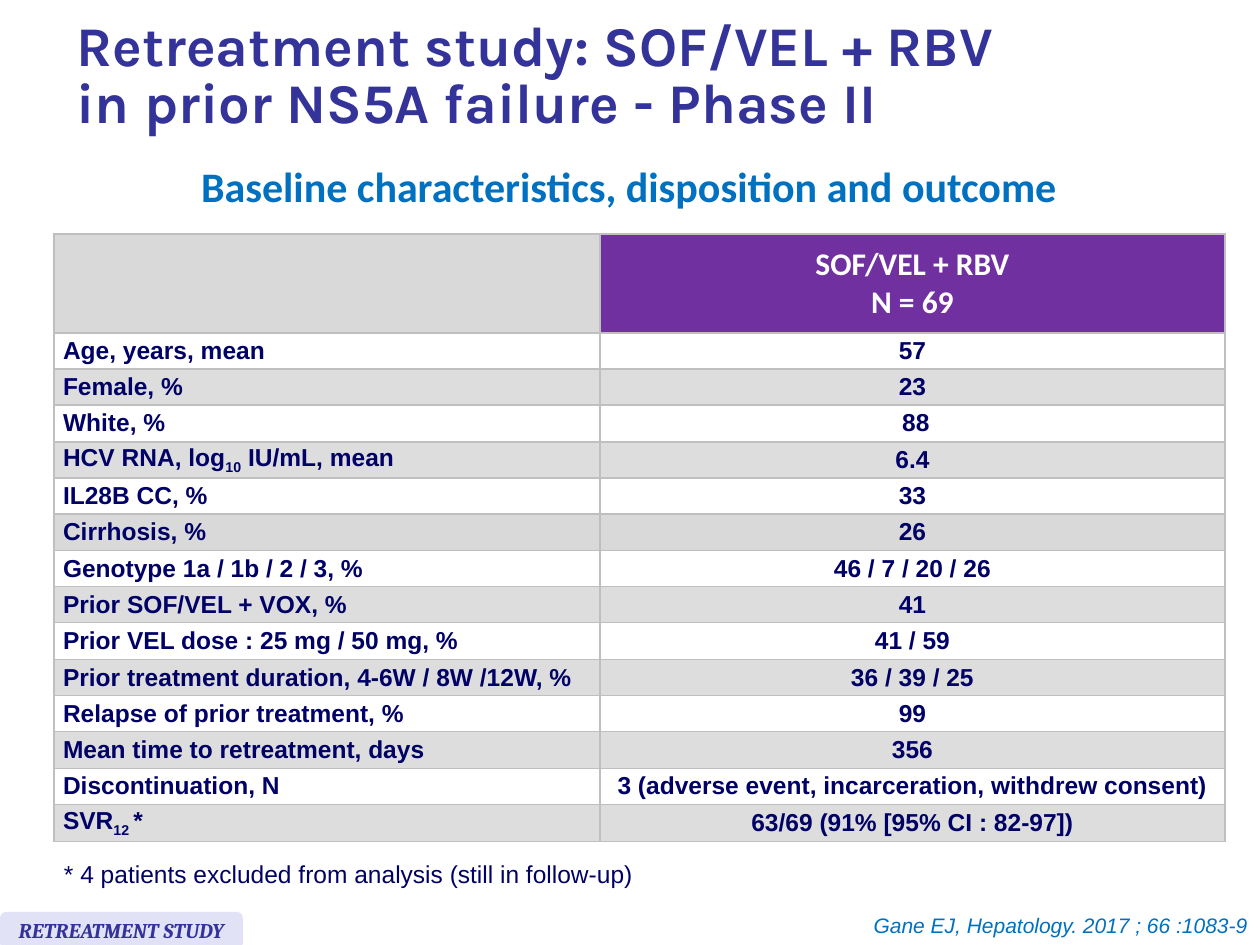
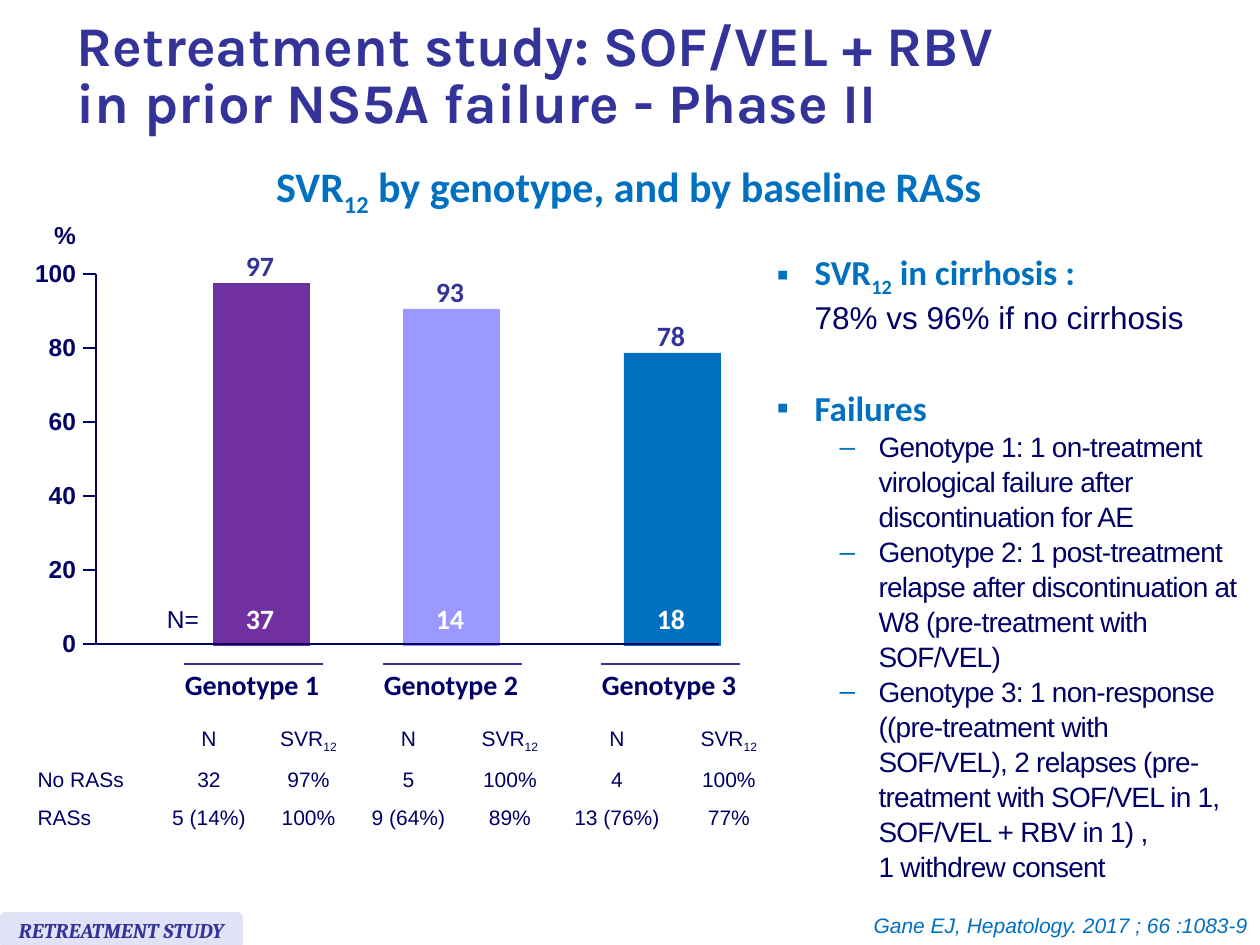
import lxml.etree
import pptx
import pptx.dml.color
import pptx.enum.shapes
import pptx.enum.text
import pptx.oxml.ns
import pptx.util

PX = 7257
INDIGO, BLUE, NAVY, PURPLE = "333399", "0070C0", "000066", "7030A0"
LILAC, PALE, WHITE, GRID = "9999FF", "E2E2F6", "FFFFFF", "BFBFBF"
rgb = pptx.dml.color.RGBColor.from_string
qn = pptx.oxml.ns.qn
Align = pptx.enum.text.PP_ALIGN
Anchor = pptx.enum.text.MSO_ANCHOR
Shape = pptx.enum.shapes.MSO_SHAPE


def write(paragraph, text, size, font, colour, bold=False, italic=False, spacing=0):
    for row, line in enumerate(text.split("\n")):
        if row:
            paragraph.add_line_break()
        for index, part in enumerate(line.split("_")):
            if not part:
                continue
            run = paragraph.add_run()
            run.text = part
            run.font.size = pptx.util.Pt(size)
            run.font.name = font
            run.font.bold = bold
            run.font.italic = italic
            run.font.color.rgb = rgb(colour)
            if index % 2:
                run._r.get_or_add_rPr().set("baseline", "-25000")
            if spacing:
                run._r.get_or_add_rPr().set("spc", str(spacing))


def label(slide, box, text, size, font, colour, bold=False, italic=False,
          align=Align.CENTER, margins=(0, 0)):
    frame = slide.shapes.add_textbox(*(n * PX for n in box)).text_frame
    frame.word_wrap = True
    frame.margin_left = frame.margin_right = margins[0] * PX
    frame.margin_top = frame.margin_bottom = margins[1] * PX
    frame.paragraphs[0].alignment = align
    write(frame.paragraphs[0], text, size, font, colour, bold, italic)


deck = pptx.Presentation()
deck.slide_width, deck.slide_height = 1260 * PX, 945 * PX
baseline_slide = deck.slides.add_slide(deck.slide_layouts[5])
genotype_slide = deck.slides.add_slide(deck.slide_layouts[1])

headings = [
    (baseline_slide, "Baseline characteristics, disposition and outcome", 183, 892),
    (genotype_slide, "SVR_12_ by genotype, and by baseline RASs", 255, 748),
]
for slide, heading, left, width in headings:
    title = slide.shapes.title
    title.left, title.top, title.width, title.height = 64 * PX, 10 * PX, 1181 * PX, 135 * PX
    title.text_frame.auto_size = pptx.enum.text.MSO_AUTO_SIZE.NONE
    title.text_frame.vertical_anchor = Anchor.MIDDLE
    headline = title.text_frame.paragraphs[0]
    headline.alignment = Align.LEFT
    headline.line_spacing = 0.85
    write(headline, "Retreatment study: SOF/VEL + RBV\nin prior NS5A failure - Phase II",
          32, "Karla", INDIGO, True)

    label(slide, (left, 155, width, 63), heading, 24, "Calibri", BLUE, True, margins=(12, 6))

    study_tag = slide.shapes.add_shape(Shape.ROUNDED_RECTANGLE, 0, 912 * PX, 243 * PX, 37 * PX)
    study_tag.shadow.inherit = False
    study_tag.fill.solid()
    study_tag.fill.fore_color.rgb = rgb(PALE)
    study_tag.line.fill.background()
    study_tag.text_frame.word_wrap = False
    study_tag.text_frame.vertical_anchor = Anchor.MIDDLE
    study_tag.text_frame.paragraphs[0].alignment = Align.CENTER
    write(study_tag.text_frame.paragraphs[0], "RETREATMENT STUDY", 12, "Cambria", INDIGO, True, True)

    label(slide, (848, 907, 412, 38), "Gane EJ, Hepatology. 2017 ; 66 :1083-9",
          12, "Arial", BLUE, italic=True, align=Align.RIGHT, margins=(12, 6))

characteristics = [
    ("", "SOF/VEL + RBV\nN = 69"),
    ("Age, years, mean", "57"),
    ("Female, %", "23"),
    ("White, %", " 88"),
    ("HCV RNA, log_10_ IU/mL, mean", "6.4"),
    ("IL28B CC, %", "33"),
    ("Cirrhosis, %", "26"),
    ("Genotype 1a / 1b / 2 / 3, %", "46 / 7 / 20 / 26"),
    ("Prior SOF/VEL + VOX, %", "41"),
    ("Prior VEL dose : 25 mg / 50 mg, %", "41 / 59"),
    ("Prior treatment duration, 4-6W / 8W /12W, %", "36 / 39 / 25"),
    ("Relapse of prior treatment, %", "99"),
    ("Mean time to retreatment, days", "356"),
    ("Discontinuation, N", "3 (adverse event, incarceration, withdrew consent)"),
    ("SVR_12 _*", "63/69 (91% [95% CI : 82-97])"),
]
patients = baseline_slide.shapes.add_table(
    len(characteristics), 2, 54 * PX, 234 * PX, 1171 * PX, 608 * PX).table
patients.first_row = patients.horz_banding = False
patients.columns[0].width, patients.columns[1].width = 546 * PX, 625 * PX
for r, values in enumerate(characteristics):
    patients.rows[r].height = (r * 509 // 14 - (r - 1) * 509 // 14 if r else 99) * PX
    for c, value in enumerate(values):
        cell = patients.cell(r, c)
        cell.margin_left = cell.margin_right = 9 * PX
        cell.margin_top = cell.margin_bottom = 0
        cell.vertical_anchor = Anchor.MIDDLE
        for side in ("a:lnL", "a:lnR", "a:lnT", "a:lnB"):
            border = lxml.etree.SubElement(cell._tc.get_or_add_tcPr(), qn(side), w="12700")
            paint = lxml.etree.SubElement(border, qn("a:solidFill"))
            lxml.etree.SubElement(paint, qn("a:srgbClr"), val=GRID)
        cell.fill.solid()
        if r == 0:
            shade = ("D9D9D9", PURPLE)[c]
        elif values[0].startswith("Cirrhosis"):
            shade = "D9D9D9"
        else:
            shade = WHITE if r % 2 else "DDDDDD"
        cell.fill.fore_color.rgb = rgb(shade)
        size, font, colour = (14, "Arial", NAVY) if r else (18, "Calibri", WHITE)
        for i, line in enumerate(value.split("\n")):
            paragraph = cell.text_frame.add_paragraph() if i else cell.text_frame.paragraphs[0]
            paragraph.alignment = Align.CENTER if c else Align.LEFT
            write(paragraph, line, size, font, colour, True)

label(baseline_slide, (52, 853, 694, 43), "* 4 patients excluded from analysis (still in follow-up)",
      14, "Arial", NAVY, align=Align.LEFT, margins=(12, 6))

zero_y, step = 644, 74
strokes = [(96, zero_y - 5 * step, 96, zero_y, NAVY), (89, zero_y, 719, zero_y, NAVY)]
for i in range(6):
    y = zero_y - i * step
    strokes.append((83, y, 96, y, NAVY))
    label(genotype_slide, (30, y - 16, 46, 30), str(20 * i), 14, "Arial", NAVY, True,
          align=Align.RIGHT)
label(genotype_slide, (54, 220, 30, 28), "%", 14, "Arial", NAVY, True, align=Align.LEFT)
label(genotype_slide, (167, 604, 40, 28), "N=", 14, "Arial", NAVY, align=Align.LEFT)

genotypes = [
    ("Genotype 1", "97", "37", 213, 283, 184, PURPLE),
    ("Genotype 2", "93", "14", 403, 309, 383, LILAC),
    ("Genotype 3", "78", "18", 624, 353, 601, BLUE),
]
for name, response, count, left, top, rule_left, colour in genotypes:
    bar = genotype_slide.shapes.add_shape(
        Shape.RECTANGLE, left * PX, top * PX, 97 * PX, (646 - top) * PX)
    bar.shadow.inherit = False
    bar.fill.solid()
    bar.fill.fore_color.rgb = rgb(colour)
    bar.line.fill.background()
    label(genotype_slide, (left - 1, top - 34, 96, 34), response, 16, "Calibri", INDIGO, True)
    label(genotype_slide, (left - 1, 602, 96, 34), count, 16, "Calibri", WHITE, True)
    label(genotype_slide, (rule_left - 12, 668, 160, 34), name, 16, "Calibri", NAVY, True)
    strokes.append((rule_left, 664, rule_left + 139, 664, INDIGO))

for x1, y1, x2, y2, colour in strokes:
    stroke = genotype_slide.shapes.add_connector(
        pptx.enum.shapes.MSO_CONNECTOR.STRAIGHT, x1 * PX, y1 * PX, x2 * PX, y2 * PX)
    stroke.line.color.rgb = rgb(colour)
    stroke.line.width = pptx.util.Pt(1.5)
    lxml.etree.SubElement(stroke._element.spPr, qn("a:effectLst"))

resistance = [
    [""] + ["N", "SVR_12_"] * 3,
    ["No RASs", "32", "97%", "5", "100%", "4", "100%"],
    ["RASs", "5 (14%)", "100%", "9 (64%)", "89%", "13 (76%)", "77%"],
]
outcomes = genotype_slide.shapes.add_table(3, 7, 25 * PX, 721 * PX, 755 * PX, 114 * PX).table
outcomes.first_row = outcomes.horz_banding = False
for c, width in enumerate((129, 110, 89, 111, 92, 122, 102)):
    outcomes.columns[c].width = width * PX
for r, values in enumerate(resistance):
    for c, value in enumerate(values):
        cell = outcomes.cell(r, c)
        cell.fill.background()
        paragraph = cell.text_frame.paragraphs[0]
        paragraph.alignment = Align.CENTER if c else Align.LEFT
        paragraph.font.size = pptx.util.Pt(12)
        write(paragraph, value, 12, "Arial", NAVY)

findings = [
    (0, "SVR_12_ in cirrhosis : \n", "78% vs 96% if no cirrhosis", 0),
    (0, "Failures", "", 29),
    (1, "", "Genotype 1: 1 on-treatment virological failure after discontinuation for AE", 0),
    (1, "", "Genotype 2: 1 post-treatment relapse after discontinuation at W8 "
            "(pre-treatment with SOF/VEL)", 0),
    (1, "", "Genotype 3: 1 non-response ((pre-treatment with SOF/VEL), 2 relapses (pre-treatment "
            "with SOF/VEL in 1, SOF/VEL + RBV in 1) , \n1 withdrew consent", 0),
]
body = genotype_slide.placeholders[1]
body.left, body.top, body.width, body.height = 764 * PX, 244 * PX, 486 * PX, 615 * PX
body.text_frame.auto_size = pptx.enum.text.MSO_AUTO_SIZE.NONE
for i, (level, lead, detail, gap) in enumerate(findings):
    paragraph = body.text_frame.add_paragraph() if i else body.text_frame.paragraphs[0]
    paragraph.level = level
    margin, hanging, mark = ((38, 38, "▪"), (102, 39, "–"))[level]
    properties = paragraph._p.get_or_add_pPr()
    properties.set("marL", str(margin * PX))
    properties.set("indent", str(-hanging * PX))
    tint = lxml.etree.SubElement(properties, qn("a:buClr"))
    lxml.etree.SubElement(tint, qn("a:srgbClr"), val=BLUE)
    lxml.etree.SubElement(properties, qn("a:buFont"), typeface="Arial")
    lxml.etree.SubElement(properties, qn("a:buChar"), char=mark)
    paragraph.alignment = Align.LEFT
    paragraph.space_before = pptx.util.Pt(gap)
    paragraph.line_spacing = 1.04 if level else 1.0
    write(paragraph, lead, 20, "Calibri", BLUE, True)
    write(paragraph, detail, 16 if level else 18, "Arial", NAVY, spacing=-40 if level else 0)

deck.save("out.pptx")
